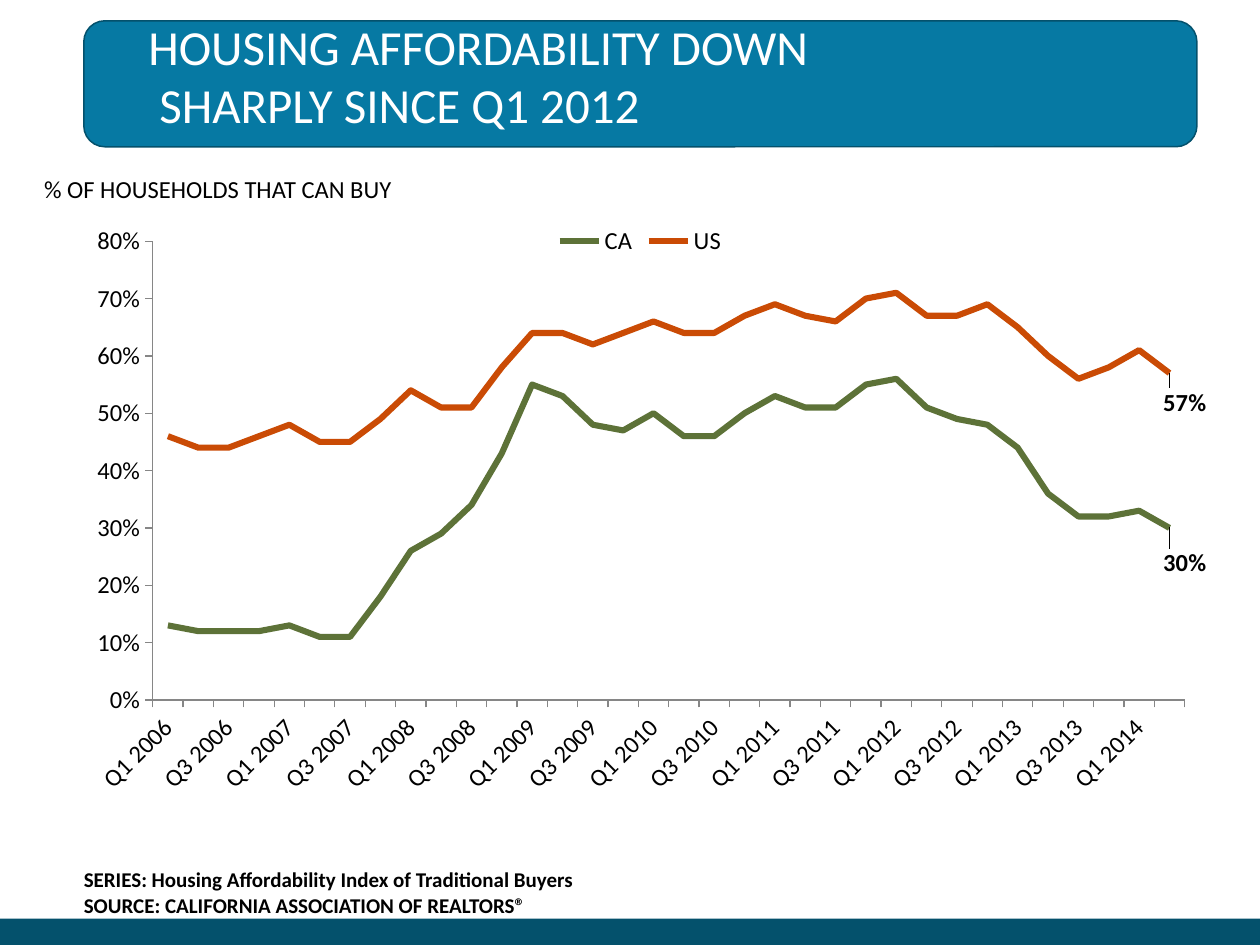
from dataclasses import dataclass

import lxml.etree
import pptx
import pptx.chart.data
import pptx.dml.color
import pptx.enum.chart
import pptx.enum.shapes
import pptx.enum.text
import pptx.oxml
import pptx.util
from pptx.util import Cm, Pt

FONT = "Calibri"
CHART_NS = "http://schemas.openxmlformats.org/drawingml/2006/chart"
C15_NS = "http://schemas.microsoft.com/office/drawing/2012/chart"


@dataclass
class Panel:
    preset: int
    left: float
    top: float
    width: float
    height: float
    fill: str
    line: str | None = None


@dataclass
class Caption:
    lines: list[str]
    left: float
    top: float
    width: float
    height: float
    size: float
    color: str = "000000"
    bold: bool = False
    wrap: bool = True


@dataclass
class Region:
    name: str
    color: str
    percents: list[int]
    label_drop: float


PANELS = [
    Panel(pptx.enum.shapes.MSO_SHAPE.RECTANGLE, 0, 18.52, 25.4, 0.53, "04516C"),
    Panel(pptx.enum.shapes.MSO_SHAPE.FLOWCHART_ALTERNATE_PROCESS,
          1.69, 0.42, 22.44, 2.54, "0679A3", "04516C"),
]
CAPTIONS = [
    Caption(["HOUSING AFFORDABILITY DOWN\v SHARPLY SINCE Q1 2012"],
            2.74, 0.2, 22.43, 1.7, 28, "FFFFFF"),
    Caption(["% OF HOUSEHOLDS THAT CAN BUY"], 0.64, 3.38, 13.51, 0.84, 14),
    Caption(["SERIES: Housing Affordability Index of Traditional Buyers",
             "SOURCE: CALIFORNIA ASSOCIATION OF REALTORS®"],
            1.44, 17.35, 11.05, 1.27, 12, bold=True, wrap=False),
]
REGIONS = [
    Region("CA", "5D7238",
           [13, 12, 12, 12, 13, 11, 11, 18, 26, 29, 34, 43, 55, 53, 48, 47, 50,
            46, 46, 50, 53, 51, 51, 55, 56, 51, 49, 48, 44, 36, 32, 32, 33, 30], 0.06),
    Region("US", "CA4B05",
           [46, 44, 44, 46, 48, 45, 45, 49, 54, 51, 51, 58, 64, 64, 62, 64, 66,
            64, 64, 67, 69, 67, 66, 70, 71, 67, 67, 69, 65, 60, 56, 58, 61, 57], 0.05),
]
QUARTERS = [f"Q{i % 4 + 1} {2006 + i // 4}" for i in range(len(REGIONS[0].percents))]


def rgb(color: str) -> pptx.dml.color.RGBColor:
    return pptx.dml.color.RGBColor.from_string(color)


def style_font(font, size: float, color: str = "000000", bold: bool = False) -> None:
    font.name, font.size, font.bold = FONT, Pt(size), bold
    font.color.rgb = rgb(color)


def draw_panel(slide, panel: Panel) -> None:
    shape = slide.shapes.add_shape(panel.preset, Cm(panel.left), Cm(panel.top),
                                   Cm(panel.width), Cm(panel.height))
    shape.shadow.inherit = False
    shape.fill.solid()
    shape.fill.fore_color.rgb = rgb(panel.fill)
    if panel.line:
        shape.line.color.rgb = rgb(panel.line)
        shape.line.width = Pt(0.85)
    else:
        shape.line.fill.background()


def draw_caption(slide, caption: Caption) -> None:
    frame = slide.shapes.add_textbox(Cm(caption.left), Cm(caption.top), Cm(caption.width),
                                     Cm(caption.height)).text_frame
    frame.word_wrap = caption.wrap
    frame.text = "\n".join(caption.lines)
    for paragraph in frame.paragraphs:
        style_font(paragraph.font, caption.size, caption.color, caption.bold)


def manual_layout(settings: dict[str, str | float]):
    entries = "".join(f'<c:{key} val="{value}"/>' for key, value in settings.items())
    return pptx.oxml.parse_xml(f'<c:layout xmlns:c="{CHART_NS}"><c:manualLayout>'
                               f'{entries}</c:manualLayout></c:layout>')


def style_axis(axis) -> None:
    axis.has_major_gridlines = False
    axis.major_tick_mark = pptx.enum.chart.XL_TICK_MARK.OUTSIDE
    axis.minor_tick_mark = pptx.enum.chart.XL_TICK_MARK.NONE
    axis.format.line.color.rgb = rgb("868686")
    axis.format.line.width = Pt(0.75)


def style_series(series, region: Region) -> None:
    series.smooth = False
    series.format.line.color.rgb = rgb(region.color)
    series.format.line.width = Pt(3.5)
    series.marker.style = pptx.enum.chart.XL_MARKER_STYLE.NONE
    series.data_labels.show_value = False
    latest = series.points[len(region.percents) - 1].data_label
    style_font(latest.font, 14, bold=True)
    latest.position = pptx.enum.chart.XL_LABEL_POSITION.RIGHT
    labels = series.data_labels._element
    labels.find(f"{{{CHART_NS}}}dLbl").insert(
        1, manual_layout({"x": -0.01, "y": region.label_drop}))
    labels.append(lxml.etree.fromstring(
        f'<c:extLst xmlns:c="{CHART_NS}"><c:ext uri="{{CE6537A1-D6FC-4f65-9D91-7224C49458BB}}" '
        f'xmlns:c15="{C15_NS}"><c15:showLeaderLines val="1"/></c:ext></c:extLst>'))


def draw_affordability_chart(slide) -> None:
    affordability = pptx.chart.data.CategoryChartData(number_format="0%")
    affordability.categories = QUARTERS
    for region in REGIONS:
        affordability.add_series(region.name, [p / 100 for p in region.percents])
    chart = slide.shapes.add_chart(pptx.enum.chart.XL_CHART_TYPE.LINE, Cm(1.48), Cm(4.27),
                                   Cm(22.86), Cm(11.86), affordability).chart
    style_font(chart.font, 14)
    chart.has_title = False
    chart.has_legend = True
    chart.legend.position = pptx.enum.chart.XL_LEGEND_POSITION.TOP
    chart.legend.include_in_layout = True
    chart.plots[0].vary_by_categories = False
    for axis in (chart.category_axis, chart.value_axis):
        style_axis(axis)
    percent_axis = chart.value_axis
    percent_axis.minimum_scale, percent_axis.maximum_scale = 0, 0.8
    percent_axis.major_unit = 0.1
    percent_axis.tick_labels.number_format = "0%"
    percent_axis.tick_labels.number_format_is_linked = False
    for series, region in zip(chart.plots[0].series, REGIONS):
        style_series(series, region)
    plot_area = chart._chartSpace.chart.plotArea
    for layout in plot_area.findall(f"{{{CHART_NS}}}layout"):
        plot_area.remove(layout)
    plot_area.insert(0, manual_layout({"layoutTarget": "inner", "xMode": "edge", "yMode": "edge",
                                       "x": 0.07, "y": 0.05, "w": 0.91, "h": 0.78}))


def main() -> None:
    """Build the housing affordability slide."""
    deck = pptx.Presentation()
    deck.slide_width, deck.slide_height = Cm(25.4), Cm(19.05)
    slide = deck.slides.add_slide(deck.slide_layouts[6])
    for panel in PANELS:
        draw_panel(slide, panel)
    draw_affordability_chart(slide)
    for caption in CAPTIONS:
        draw_caption(slide, caption)
    deck.save("out.pptx")


if __name__ == "__main__":
    main()
